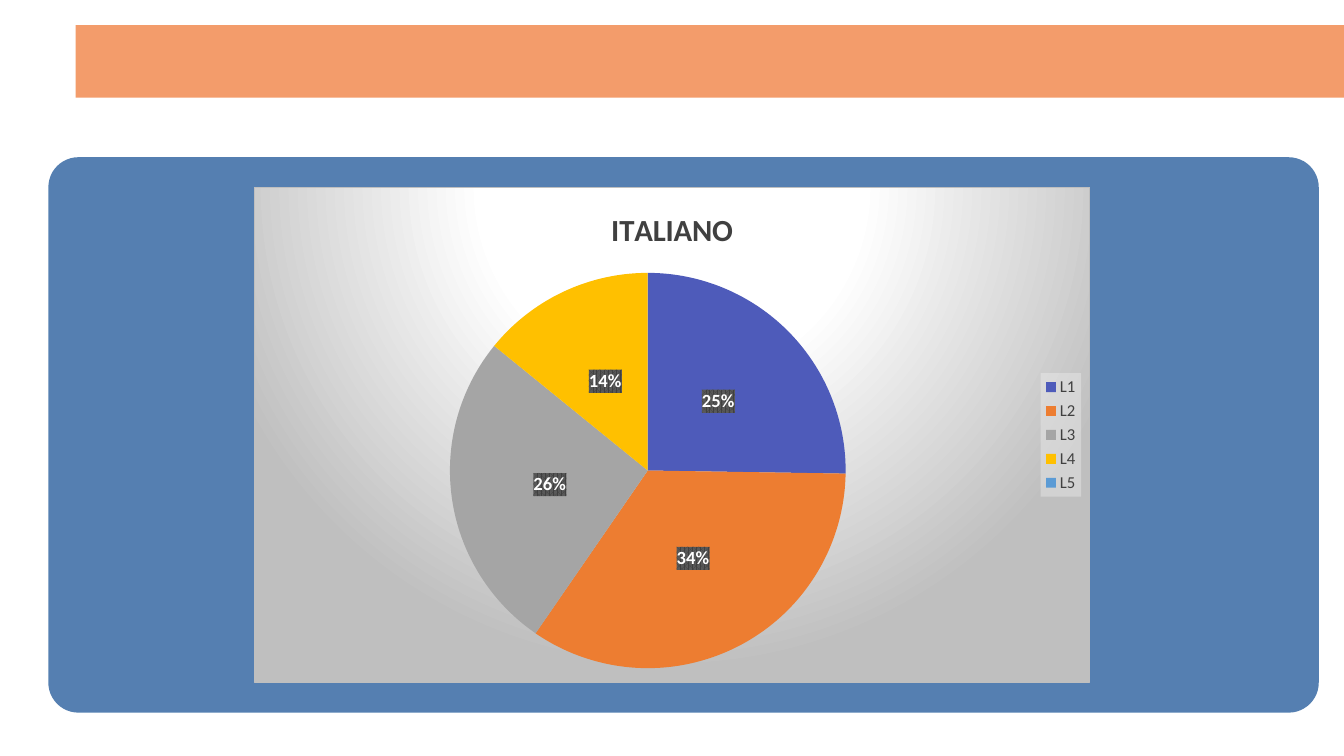
from pptx import Presentation
from pptx.chart.data import CategoryChartData as Data
from pptx.dml.color import RGBColor as RGB
from pptx.enum.chart import XL_CHART_TYPE as Kind, XL_LABEL_POSITION as Place, XL_LEGEND_POSITION as Side
from pptx.enum.shapes import MSO_SHAPE as Form
from pptx.oxml import parse_xml
from pptx.oxml.ns import nsdecls, qn
from pptx.util import Inches, Pt

WIDE, HIGH = 13.33, 7.5
HUES = {
    "band": "F39C6B", "panel": "0D4A91", "ink": "404040", "light": "FFFFFF",
    "edge": "BFBFBF", "key": "F2F2F2", "tag": "595959",
}
SLICES = {
    "L1": (25, "4E5BBA"), "L2": (34, "ED7D31"), "L3": (26, "A5A5A5"),
    "L4": (14, "FFC000"), "L5": (None, "5B9BD5"),
}
BAND = (0.75, 0.25, 12.58, 0.72)
PANEL = (0.48, 1.56, 12.6, 5.51)
PIE = (0.234, 0.172, 0.474, 0.8)


def tint(name):
    """Return a named colour."""
    return RGB.from_string(HUES[name])


def node(text):
    """Return an XML element with chart and drawing namespaces."""
    head, tail = text.split(">", 1)
    return parse_xml(f"{head} {nsdecls('c', 'a')}>{tail}")


def color(name, extra=""):
    """Return the XML of a named colour."""
    return f'<a:srgbClr val="{HUES[name]}">{extra}</a:srgbClr>'


def style(font, size, name, bold=False):
    """Set the look of a chart font."""
    font.name, font.size, font.bold = "Calibri", Pt(size), bold
    font.color.rgb = tint(name)


def block(slide, form, box, name):
    """Draw a plain filled shape in a box."""
    shape = slide.shapes.add_shape(form, *map(Inches, box))
    shape.shadow.inherit = False
    shape.fill.solid()
    shape.fill.fore_color.rgb = tint(name)
    shape.line.fill.background()
    return shape


def panel(slide, box):
    """Draw the rounded translucent panel."""
    shape = block(slide, Form.ROUNDED_RECTANGLE, box, "panel")
    shape.adjustments[0] = 0.054
    for item in shape.fill._xPr.iter(qn("a:srgbClr")):
        item.append(node('<a:alpha val="70000"></a:alpha>'))


def fill_back(chart):
    """Give the chart its round gradient and border."""
    stops = "".join(
        f'<a:gs pos="{pos * 1000}">{color(name)}</a:gs>'
        for pos, name in ((0, "light"), (39, "light"), (100, "edge")))
    back = node(
        f'<c:spPr><a:gradFill><a:gsLst>{stops}</a:gsLst><a:path path="circle">'
        '<a:fillToRect l="50000" t="-80000" r="50000" b="180000"/></a:path></a:gradFill>'
        f'<a:ln w="9525"><a:solidFill>{color("edge")}</a:solidFill></a:ln></c:spPr>')
    chart._chartSpace.find(qn("c:chart")).addnext(back)


def set_plot(chart, box):
    """Place the pie by shares of the chart."""
    area = chart._chartSpace.find(".//" + qn("c:plotArea"))
    for old in area.findall(qn("c:layout")):
        area.remove(old)
    parts = "".join(f'<c:{key} val="{val}"/>' for key, val in zip("xywh", box))
    area.insert(0, node(
        '<c:layout><c:manualLayout><c:layoutTarget val="inner"/><c:xMode val="edge"/>'
        f'<c:yMode val="edge"/>{parts}</c:manualLayout></c:layout>'))


def set_key(chart):
    """Format the legend on the right."""
    chart.has_legend = True
    key = chart.legend
    key.position, key.include_in_layout = Side.RIGHT, False
    style(key.font, 11.9, "ink")
    fade = color("key", '<a:alpha val="39000"/>')
    key._element.find(qn("c:overlay")).addnext(
        node(f"<c:spPr><a:solidFill>{fade}</a:solidFill></c:spPr>"))


def set_tags(row):
    """Format the percent labels."""
    tags = row.data_labels
    tags.show_percentage, tags.show_value = True, False
    tags.number_format, tags.number_format_is_linked = "0%", False
    tags.position = Place.CENTER
    style(tags.font, 13.3, "light", True)
    tags._element.find(qn("c:txPr")).addprevious(node(
        f'<c:spPr><a:pattFill prst="pct75"><a:fgClr>{color("ink")}</a:fgClr>'
        f'<a:bgClr>{color("tag")}</a:bgClr></a:pattFill></c:spPr>'))


def pie(slide, box):
    """Draw the pie chart centred in the panel box."""
    left, top, width, height = box
    wide, high = 8.29, 4.92
    place = ((WIDE - wide) / 2, top + (height - high) / 2, wide, high)
    data = Data()
    data.categories = list(SLICES)
    data.add_series("ITALIANO", [val for val, _ in SLICES.values()])
    chart = slide.shapes.add_chart(Kind.PIE, *map(Inches, place), data).chart
    style(chart.font, 10, "ink")
    fill_back(chart)
    set_plot(chart, PIE)
    set_key(chart)
    chart.has_title = True
    run = chart.chart_title.text_frame.paragraphs[0].add_run()
    run.text = "ITALIANO"
    style(run.font, 22, "ink", True)
    chart.chart_title.include_in_layout = False
    row = chart.plots[0].series[0]
    for spot, (_, hue) in enumerate(SLICES.values()):
        fill = row.points[spot].format.fill
        fill.solid()
        fill.fore_color.rgb = RGB.from_string(hue)
    set_tags(row)


def main():
    """Build and save the slide."""
    deck = Presentation()
    deck.slide_width, deck.slide_height = Inches(WIDE), Inches(HIGH)
    slide = deck.slides.add_slide(deck.slide_layouts[6])
    block(slide, Form.RECTANGLE, BAND, "band")
    panel(slide, PANEL)
    pie(slide, PANEL)
    deck.save("out.pptx")


if __name__ == "__main__":
    main()
